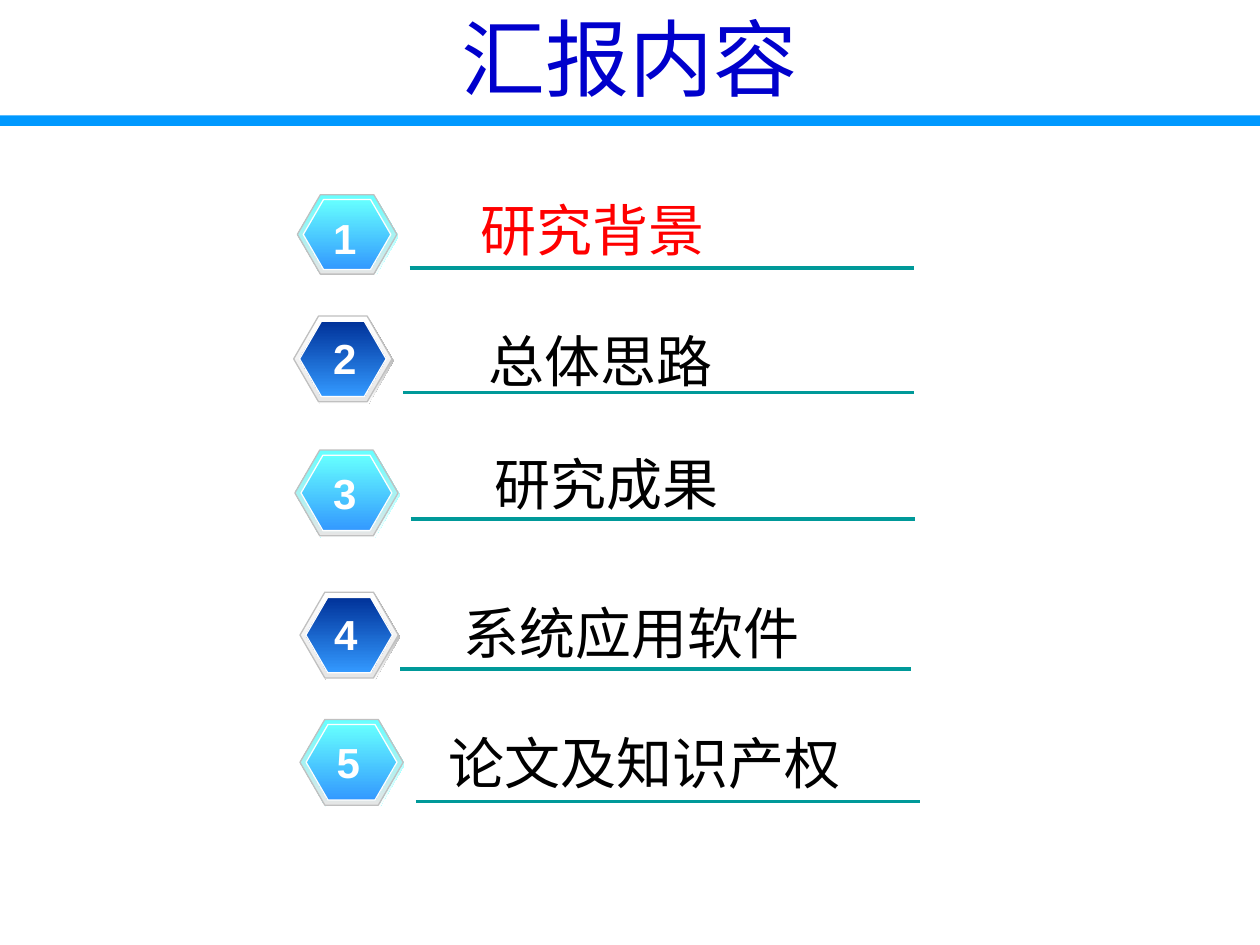
from dataclasses import dataclass

from lxml import etree
from pptx import Presentation
from pptx.dml.color import RGBColor
from pptx.enum.shapes import MSO_CONNECTOR, MSO_SHAPE
from pptx.enum.text import MSO_ANCHOR, PP_ALIGN
from pptx.oxml.ns import qn
from pptx.util import Pt

RECTANGLE, HEXAGON = MSO_SHAPE.RECTANGLE, MSO_SHAPE.HEXAGON
STRAIGHT = MSO_CONNECTOR.STRAIGHT
LEFT, CENTER = PP_ALIGN.LEFT, PP_ALIGN.CENTER
TOP, MIDDLE = MSO_ANCHOR.TOP, MSO_ANCHOR.MIDDLE

WHITE = RGBColor(0xFF, 0xFF, 0xFF)
BLACK = RGBColor(0x00, 0x00, 0x00)
RED = RGBColor(0xFF, 0x00, 0x00)
TITLE_BLUE = RGBColor(0x00, 0x00, 0xCC)
BAND_BLUE = RGBColor(0x00, 0x99, 0xFF)
TEAL = RGBColor(0x00, 0x99, 0x99)
CYAN = RGBColor(0x66, 0xFF, 0xFF)
NAVY = RGBColor(0x00, 0x32, 0x99)
SKY = RGBColor(0x33, 0x99, 0xFF)
GRAY = RGBColor(0x80, 0x80, 0x80)
SILVER = RGBColor(0xC0, 0xC0, 0xC0)
PALE = RGBColor(0xE6, 0xE6, 0xE6)
NEAR_WHITE = RGBColor(0xFE, 0xFE, 0xFE)

LIGHT_BADGE = (CYAN, CYAN, CYAN)
DARK_BADGE = (GRAY, WHITE, NAVY)


@dataclass
class Topic:
    text: str
    color: RGBColor
    label: tuple
    indent: float
    badge: tuple
    number: tuple
    rule: tuple


TOPICS = [
    Topic("研究背景", RED, (246.2, 108, 171.4, 45.4), 21,
          (169.9, 111.3, 56.9, 45.4), (197, 118.1), (234, 522, 153.2)),
    Topic("总体思路", BLACK, (257, 182.9, 172.1, 46), 0,
          (167.8, 180.6, 56.2, 49), (197, 186.5), (230.4, 522, 224.3)),
    Topic("研究成果", BLACK, (264.2, 253.4, 164.9, 46), 0,
          (168.5, 257.2, 59, 49), (197, 263.5), (234.6, 522.6, 296.5)),
    Topic("系统应用软件", BLACK, (253.4, 338.4, 215.3, 45.4), 0,
          (171.4, 338.4, 56.2, 49), (197.6, 344.2), (228.8, 520.4, 382.3)),
    Topic("论文及知识产权", BLACK, (241.9, 412.6, 256.3, 46), 7,
          (171.4, 411.1, 59, 49), (199, 417.6), (237.6, 525.6, 458)),
]


class AgendaSlide:
    font = "Arial"

    def __init__(self, slide):
        self.shapes = slide.shapes

    def preset(self, kind, box):
        shape = self.shapes.add_shape(kind, *map(Pt, box))
        shape.shadow.inherit = False
        shape.line.fill.background()
        return shape

    def bar(self, box, color):
        bar = self.preset(RECTANGLE, box)
        bar.fill.solid()
        bar.fill.fore_color.rgb = color
        return bar

    def set_text(self, shape, text, size, color, align=CENTER, anchor=TOP,
                 bold=False, wrap=True, indent=0):
        frame = shape.text_frame
        frame.word_wrap = wrap
        frame.vertical_anchor = anchor
        frame.margin_left = Pt(7.2 + indent)
        paragraph = frame.paragraphs[0]
        paragraph.text = text
        paragraph.alignment = align
        font = paragraph.font
        font.name, font.size, font.bold = self.font, Pt(size), bold
        font.color.rgb = color

    def label(self, box, text, size, color, **style):
        self.set_text(self.shapes.add_textbox(*map(Pt, box)), text, size, color, **style)

    def hexagon(self, box, top_color, bottom_color, outline=None):
        hexagon = self.preset(HEXAGON, box)
        hexagon.adjustments[0] = 0.29
        hexagon.fill.gradient()
        hexagon.fill.gradient_angle = 270
        for stop, color in zip(hexagon.fill.gradient_stops, (top_color, bottom_color)):
            stop.color.rgb = color
        if outline is not None:
            hexagon.line.color.rgb = outline
            hexagon.line.width = Pt(0.75)

    def badge(self, box, palette):
        left, top, width, height = box
        shade, rim, core = palette
        self.hexagon((left + 0.9, top + 1.1, width, height), shade, WHITE)
        self.hexagon(box, rim, PALE, SILVER)
        self.hexagon((left + 0.06 * width, top + 0.06 * height,
                      0.88 * width, 0.88 * height), core, SKY, NEAR_WHITE)

    def rule(self, start, end, y):
        rule = self.shapes.add_connector(STRAIGHT, Pt(start), Pt(y), Pt(end), Pt(y))
        rule.line.color.rgb = TEAL
        rule.line.width = Pt(2)
        etree.SubElement(rule._element.spPr, qn("a:effectLst"))

    def topic(self, number, topic):
        self.rule(*topic.rule)
        self.badge(topic.badge, LIGHT_BADGE if number % 2 else DARK_BADGE)
        middle, top = topic.number
        self.label((middle - 14, top, 28, 36), str(number), 24, WHITE,
                   bold=True, wrap=False)
        self.label(topic.label, topic.text, 32, topic.color,
                   align=LEFT if topic.indent else CENTER, indent=topic.indent)


def main():
    deck = Presentation()
    deck.slide_width, deck.slide_height = Pt(720), Pt(540)
    agenda = AgendaSlide(deck.slides.add_slide(deck.slide_layouts[6]))
    agenda.bar((0, 66, 720, 6), BAND_BLUE)
    heading = agenda.bar((0, 0, 720, 65), WHITE)
    agenda.set_text(heading, "汇报内容", 48, TITLE_BLUE, anchor=MIDDLE)
    for number, topic in enumerate(TOPICS, 1):
        agenda.topic(number, topic)
    deck.save("out.pptx")


if __name__ == "__main__":
    main()
